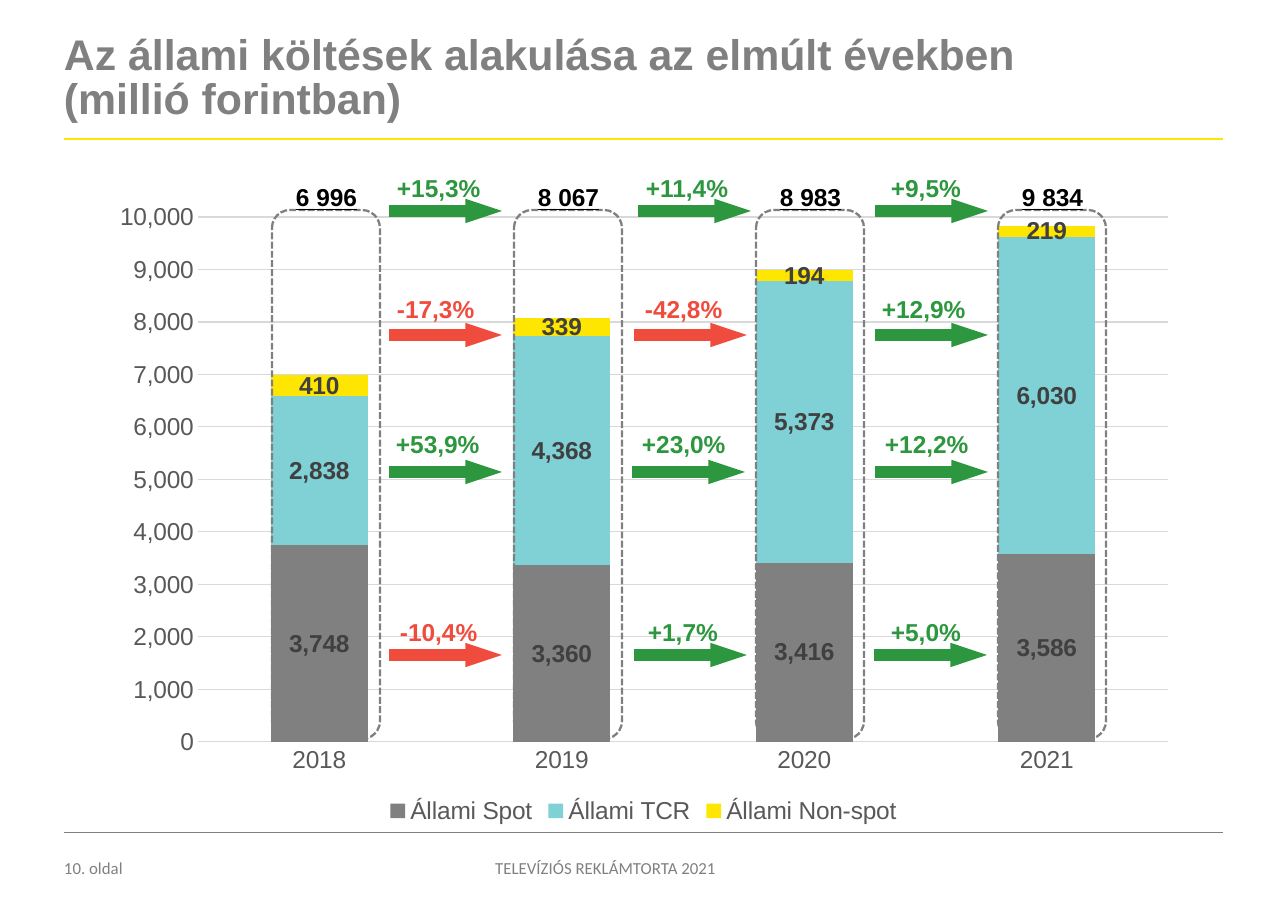
from lxml import etree
from pptx import Presentation
from pptx.chart.data import CategoryChartData
from pptx.dml.color import RGBColor
from pptx.enum.chart import XL_CHART_TYPE, XL_LABEL_POSITION, XL_LEGEND_POSITION, XL_TICK_MARK
from pptx.enum.dml import MSO_LINE
from pptx.enum.shapes import MSO_CONNECTOR, MSO_SHAPE
from pptx.enum.text import MSO_ANCHOR, MSO_AUTO_SIZE, PP_ALIGN
from pptx.oxml.ns import qn
from pptx.util import Pt

STACKED = XL_CHART_TYPE.COLUMN_STACKED
LABEL_CENTER = XL_LABEL_POSITION.CENTER
LEGEND_BOTTOM = XL_LEGEND_POSITION.BOTTOM
NO_TICK = XL_TICK_MARK.NONE
DASH = MSO_LINE.SQUARE_DOT
STRAIGHT = MSO_CONNECTOR.STRAIGHT
ROUNDED = MSO_SHAPE.ROUNDED_RECTANGLE
TOP, MIDDLE = MSO_ANCHOR.TOP, MSO_ANCHOR.MIDDLE
LEFT, CENTER = PP_ALIGN.LEFT, PP_ALIGN.CENTER
NO_AUTOFIT = MSO_AUTO_SIZE.NONE

EMU_PER_PX = 8305
COLORS = {
    "gray": "808080", "yellow": "FFE600", "teal": "7FD1D6", "black": "000000",
    "axis": "595959", "grid": "D9D9D9", "value": "404040",
    "growth": "2C973E", "decline": "F04C3E",
}

YEARS = ["2018", "2019", "2020", "2021"]
TOTALS = ["6 996", "8 067", "8 983", "9 834"]
SPENDING = [
    ("Állami Spot", [3748, 3360, 3416, 3586], "gray"),
    ("Állami TCR", [2838, 4368, 5373, 6030], "teal"),
    ("Állami Non-spot", [410, 339, 194, 219], "yellow"),
]
# label top, arrow height, then (change, label left, arrow start) for each pair of years
CHANGES = [
    (167, 211, [("+15,3%", 386, 395), ("+11,4%", 635, 644), ("+9,5%", 880, 881)]),
    (288, 335, [("-17,3%", 386, 395), ("-42,8%", 634, 640), ("+12,9%", 871, 881)]),
    (423, 472, [("+53,9%", 385, 395), ("+23,0%", 631, 638), ("+12,2%", 874, 881)]),
    (611, 655, [("-10,4%", 389, 395), ("+1,7%", 637, 640), ("+5,0%", 880, 880)]),
]


def px(*lengths):
    return [length * EMU_PER_PX for length in lengths]


def rgb(name):
    return RGBColor.from_string(COLORS[name])


class SlideBuilder:
    def __init__(self, deck):
        self.slide = deck.slides.add_slide(deck.slide_layouts[5])
        self.shapes = self.slide.shapes

    def style_font(self, font, size, color, bold=False, name="Arial"):
        font.name, font.size, font.bold = name, Pt(size), bold
        font.color.rgb = rgb(color)

    def frame(self, shape, insets, anchor):
        frame = shape.text_frame
        frame.word_wrap, frame.auto_size = True, NO_AUTOFIT
        frame.vertical_anchor = anchor
        (frame.margin_left, frame.margin_top,
         frame.margin_right, frame.margin_bottom) = px(*insets)
        return frame

    def title(self, lines, box):
        title = self.shapes.title
        title.left, title.top, title.width, title.height = px(*box)
        paragraph = self.frame(title, (0, 0, 0, 0), TOP).paragraphs[0]
        paragraph.alignment, paragraph.line_spacing = LEFT, 0.85
        for index, line in enumerate(lines):
            if index:
                paragraph.add_line_break()
            run = paragraph.add_run()
            run.text = line
            self.style_font(run.font, 28, "gray", True)

    def text(self, words, box, size, color, bold=False, name="Arial", align=LEFT,
             insets=(0, 0, 0, 0), anchor=TOP, spacing=None, underline=None):
        frame = self.frame(self.shapes.add_textbox(*px(*box)), insets, anchor)
        paragraph = frame.paragraphs[0]
        paragraph.alignment, paragraph.line_spacing = align, spacing
        run = paragraph.add_run()
        run.text = words
        self.style_font(run.font, size, color, bold, name)
        run.font.underline = underline

    def line(self, left, right, y, color, width):
        line = self.shapes.add_connector(STRAIGHT, *px(left, y, right, y))
        line.line.color.rgb, line.line.width = rgb(color), Pt(width)
        etree.SubElement(line.element.spPr, qn("a:effectLst"))
        return line

    def arrow(self, left, y, color):
        arrow = self.line(left, left + 107, y, color, 8)
        outline = arrow.element.spPr.find(qn("a:ln"))
        outline.set("cap", "sq")
        etree.SubElement(outline, qn("a:tailEnd"), type="triangle", w="sm", len="med")

    def dashed_frame(self, box):
        frame = self.shapes.add_shape(ROUNDED, *px(*box))
        frame.shadow.inherit = False
        frame.fill.background()
        frame.line.color.rgb, frame.line.width = rgb("gray"), Pt(1.5)
        frame.line.dash_style = DASH

    def chart(self, box, plot_box):
        data = CategoryChartData(number_format="#,##0")
        data.categories = YEARS
        for name, values, _ in SPENDING:
            data.add_series(name, values)
        chart = self.shapes.add_chart(STACKED, *px(*box), data).chart
        self.style_font(chart.font, 16, "axis")
        chart.has_title = False
        chart.has_legend = True
        chart.legend.position = LEGEND_BOTTOM
        chart.legend.include_in_layout = False
        self.style_font(chart.legend.font, 16, "axis")

        plot = chart.plots[0]
        plot.gap_width, plot.overlap, plot.vary_by_categories = 150, 100, False
        for series, (_, _, color) in zip(plot.series, SPENDING):
            series.format.fill.solid()
            series.format.fill.fore_color.rgb = rgb(color)
            labels = series.data_labels
            labels.show_value, labels.position = True, LABEL_CENTER
            labels.number_format, labels.number_format_is_linked = "#,##0", False
            self.style_font(labels.font, 16, "value", True)

        years, amounts = chart.category_axis, chart.value_axis
        for axis in (years, amounts):
            axis.major_tick_mark = axis.minor_tick_mark = NO_TICK
            self.style_font(axis.tick_labels.font, 16, "axis")
        amounts.minimum_scale, amounts.maximum_scale, amounts.major_unit = 0, 10000, 1000
        amounts.tick_labels.number_format = "#,##0"
        amounts.tick_labels.number_format_is_linked = False
        amounts.format.line.fill.background()
        amounts.has_major_gridlines = True
        for line in (years.format.line, amounts.major_gridlines.format.line):
            line.color.rgb, line.width = rgb("grid"), Pt(0.75)
        self.place_plot(chart, box, plot_box)

    def place_plot(self, chart, box, plot_box):
        """Fix the inner plot area at plot_box, given in slide px."""
        area = chart.element.find(".//" + qn("c:plotArea"))
        for automatic in area.findall(qn("c:layout")):
            area.remove(automatic)
        layout = etree.Element(qn("c:layout"))
        area.insert(0, layout)
        manual = etree.SubElement(layout, qn("c:manualLayout"))
        left, top, width, height = box
        x, y, w, h = plot_box
        settings = [("layoutTarget", "inner"), ("xMode", "edge"), ("yMode", "edge"),
                    ("x", (x - left) / width), ("y", (y - top) / height),
                    ("w", w / width), ("h", h / height)]
        for tag, value in settings:
            etree.SubElement(manual, qn("c:" + tag), val=str(value))


def main():
    deck = Presentation()
    deck.slide_width, deck.slide_height = px(1288, 914)
    page = SlideBuilder(deck)

    page.title(["Az állami költések alakulása az elmúlt években", "(millió forintban)"],
               (64, 36, 1159, 103))
    page.line(64, 1223, 139, "yellow", 1.5)
    page.line(64, 1223, 832, "gray", 0.25)
    page.text("10. oldal", (64, 855, 94, 26), 11, "gray", name="Calibri", anchor=MIDDLE)
    page.text("TELEVÍZIÓS REKLÁMTORTA 2021", (364, 855, 483, 26), 11, "gray",
              name="Calibri", align=CENTER, anchor=MIDDLE)

    page.chart((98, 190, 1091, 639), (198, 217, 970, 525))
    for index, total in enumerate(TOTALS):
        left = 272 + 242 * index
        page.dashed_frame((left, 210, 108, 529))
        page.text(total, (left + 7, 183, 95, 30), 16, "black", True, align=CENTER,
                  insets=(0, 4, 0, 0), spacing=0.85, underline=True)

    for label_top, arrow_y, steps in CHANGES:
        for change, label_left, arrow_left in steps:
            color = "decline" if change.startswith("-") else "growth"
            page.arrow(arrow_left, arrow_y, color)
            page.text(change, (label_left, label_top, 118, 52), 16, color, True,
                      insets=(11, 6, 11, 6))

    deck.save("out.pptx")


if __name__ == "__main__":
    main()
